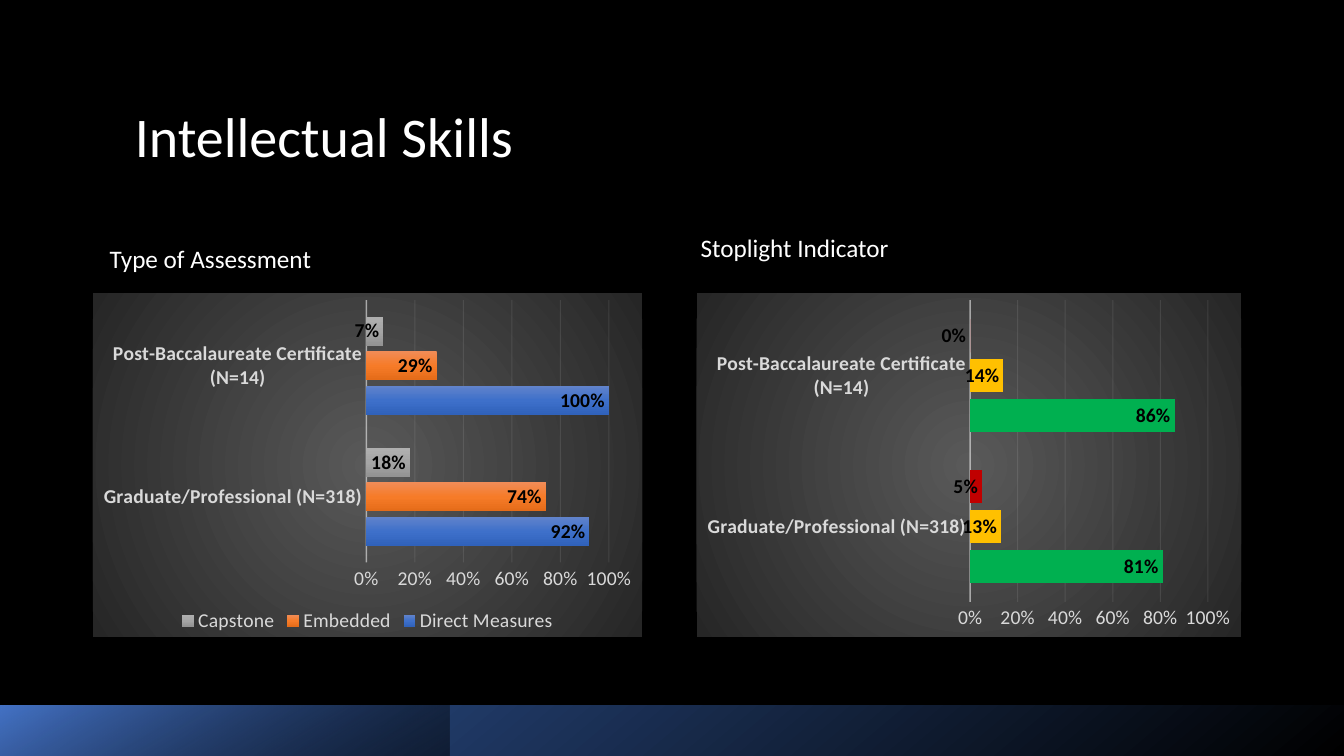
"""Build the Intellectual Skills slide with two bar charts."""
from pptx import Presentation
from pptx.chart.data import CategoryChartData as Data
from pptx.dml.color import RGBColor as Rgb
from pptx.enum.chart import XL_CHART_TYPE as Kind
from pptx.enum.chart import XL_LABEL_POSITION as Spot
from pptx.enum.chart import XL_LEGEND_POSITION as Side
from pptx.enum.chart import XL_TICK_MARK as Tick
from pptx.enum.shapes import MSO_SHAPE as Shape
from pptx.enum.text import MSO_ANCHOR as Anchor
from pptx.oxml import parse_xml
from pptx.oxml.ns import nsdecls, qn
from pptx.util import Pt

PX = 9144
HUES = {
    "black": "000000", "white": "FFFFFF", "text": "D9D9D9", "line": "F2F2F2",
    "navy": "2F5597", "blue": "4472C4", "green": "00B050", "gold": "FFC000",
    "red": "C00000", "gray": "595959", "dark": "262626",
}
BLUES = [(0, "6183CB"), (50, "3E70CA"), (100, "3062BB")]
CORALS = [(0, "F18C57"), (50, "F67B28"), (100, "E56C19")]
GRAYS = [(0, "AFAFAF"), (50, "A5A5A5"), (100, "939393")]
CATS = ["Graduate/Professional (N=318)", "Post-Baccalaureate Certificate (N=14)"]


def hue(name):
    return Rgb.from_string(HUES[name])


def grad(stops, angle=None):
    marks = ""
    for pos, tone, *alpha in stops:
        clear = f'<a:alpha val="{alpha[0] * 1000}"/>' if alpha else ""
        marks += (f'<a:gs pos="{pos * 1000}"><a:srgbClr val="{tone}">'
                  f'{clear}</a:srgbClr></a:gs>')
    if angle is None:
        way = ('<a:path path="circle"><a:fillToRect l="50000" t="50000" '
               'r="50000" b="50000"/></a:path>')
    else:
        way = f'<a:lin ang="{angle * 60000}" scaled="0"/>'
    return parse_xml(f'<a:gradFill {nsdecls("a")} rotWithShape="1">'
                     f'<a:gsLst>{marks}</a:gsLst>{way}</a:gradFill>')


class Deck:
    face = "Calibri"

    def __init__(self, wide, high):
        self.prs = Presentation()
        self.prs.slide_width, self.prs.slide_height = wide * PX, high * PX
        self.slide = self.prs.slides.add_slide(self.prs.slide_layouts[6])
        back = self.slide.background.fill
        back.solid()
        back.fore_color.rgb = hue("black")

    def style(self, font, size, tone, bold=False):
        font.name, font.size, font.bold = self.face, Pt(size), bold
        font.color.rgb = hue(tone)

    def fade(self, fill, stops, angle):
        fill.solid()
        root = fill._xPr
        root.replace(root.find(qn("a:solidFill")), grad(stops, angle))

    def text(self, box, words, size, after=0, space=None, anchor=Anchor.TOP):
        frame = self.slide.shapes.add_textbox(*(n * PX for n in box)).text_frame
        frame.word_wrap = True
        frame.vertical_anchor = anchor
        para = frame.paragraphs[0]
        para.space_after = Pt(after)
        para.line_spacing = space
        run = para.add_run()
        run.text = words
        self.style(run.font, size, "white")

    def band(self, box, stops, angle):
        bar = self.slide.shapes.add_shape(Shape.RECTANGLE, *(n * PX for n in box))
        bar.shadow.inherit = False
        bar.line.fill.background()
        self.fade(bar.fill, stops, angle)

    def stroke(self, line, width, alpha):
        line.width = Pt(width)
        line.color.rgb = hue("line")
        tone = next(line._ln.iter(qn("a:srgbClr")))
        tone.append(parse_xml(f'<a:alpha {nsdecls("a")} val="{alpha * 1000}"/>'))

    def axes(self, chart):
        cat, val = chart.category_axis, chart.value_axis
        for axis in (cat, val):
            axis.major_tick_mark = axis.minor_tick_mark = Tick.NONE
            self.style(axis.tick_labels.font, 14, "text", axis is cat)
        cat.has_major_gridlines = False
        self.stroke(cat.format.line, 1, 54)
        val.maximum_scale = 1
        val.has_major_gridlines = True
        self.stroke(val.major_gridlines.format.line, 0.75, 10)
        val.format.line.fill.background()
        val.tick_labels.number_format = "0%"
        val.tick_labels.number_format_is_linked = False

    def paint(self, series, tone):
        fill = series.format.fill
        if isinstance(tone, str):
            fill.solid()
            fill.fore_color.rgb = hue(tone)
        else:
            self.fade(fill, tone, 90)
        series.invert_if_negative = False
        tags = series.data_labels
        tags.show_value = True
        tags.position = Spot.INSIDE_END
        tags.number_format = "0%"
        tags.number_format_is_linked = False
        self.style(tags.font, 14, "black", True)

    def chart(self, box, rows, legend=False):
        data = Data(number_format="0%")
        data.categories = CATS
        for name, vals, _ in rows:
            data.add_series(name, vals)
        chart = self.slide.shapes.add_chart(
            Kind.BAR_CLUSTERED, *(n * PX for n in box), data).chart
        self.style(chart.font, 10, "white")
        chart.has_title = False
        root = chart.element
        face = parse_xml(f'<c:spPr {nsdecls("c", "a")}>'
                         '<a:ln><a:noFill/></a:ln></c:spPr>')
        face.insert(0, grad([(0, HUES["gray"]), (100, HUES["dark"])]))
        root.find(qn("c:txPr")).addprevious(face)
        self.axes(chart)
        plot = chart.plots[0]
        plot.gap_width, plot.overlap = 115, -20
        plot.vary_by_categories = False
        for series, row in zip(plot.series, rows):
            self.paint(series, row[2])
        chart.has_legend = legend
        if legend:
            chart.legend.position = Side.BOTTOM
            chart.legend.include_in_layout = False
            self.style(chart.legend.font, 14, "text")


def main():
    deck = Deck(1333, 750)
    deck.text((124, 78, 1113, 120), "Intellectual Skills", 40,
              space=0.9, anchor=Anchor.MIDDLE)
    deck.band((0, 700, 1333, 51),
              [(0, HUES["black"]), (100, HUES["navy"])], 230)
    deck.band((0, 700, 446, 51),
              [(0, HUES["black"], 46), (99, HUES["blue"])], 240)
    deck.text((99, 236, 567, 405), "Type of Assessment", 18, after=6)
    deck.text((685, 226, 570, 405), "Stoplight Indicator", 18, after=6)
    deck.chart((92, 291, 545, 341), [
        ("Direct Measures", (0.92, 1), BLUES),
        ("Embedded", (0.74, 0.29), CORALS),
        ("Capstone", (0.18, 0.07), GRAYS),
    ], legend=True)
    deck.chart((691, 291, 540, 341), [
        ("Series 1", (0.81, 0.86), "green"),
        ("Series 2", (0.13, 0.14), "gold"),
        ("Series 3", (0.05, 0), "red"),
    ])
    deck.prs.save("out.pptx")


if __name__ == "__main__":
    main()
